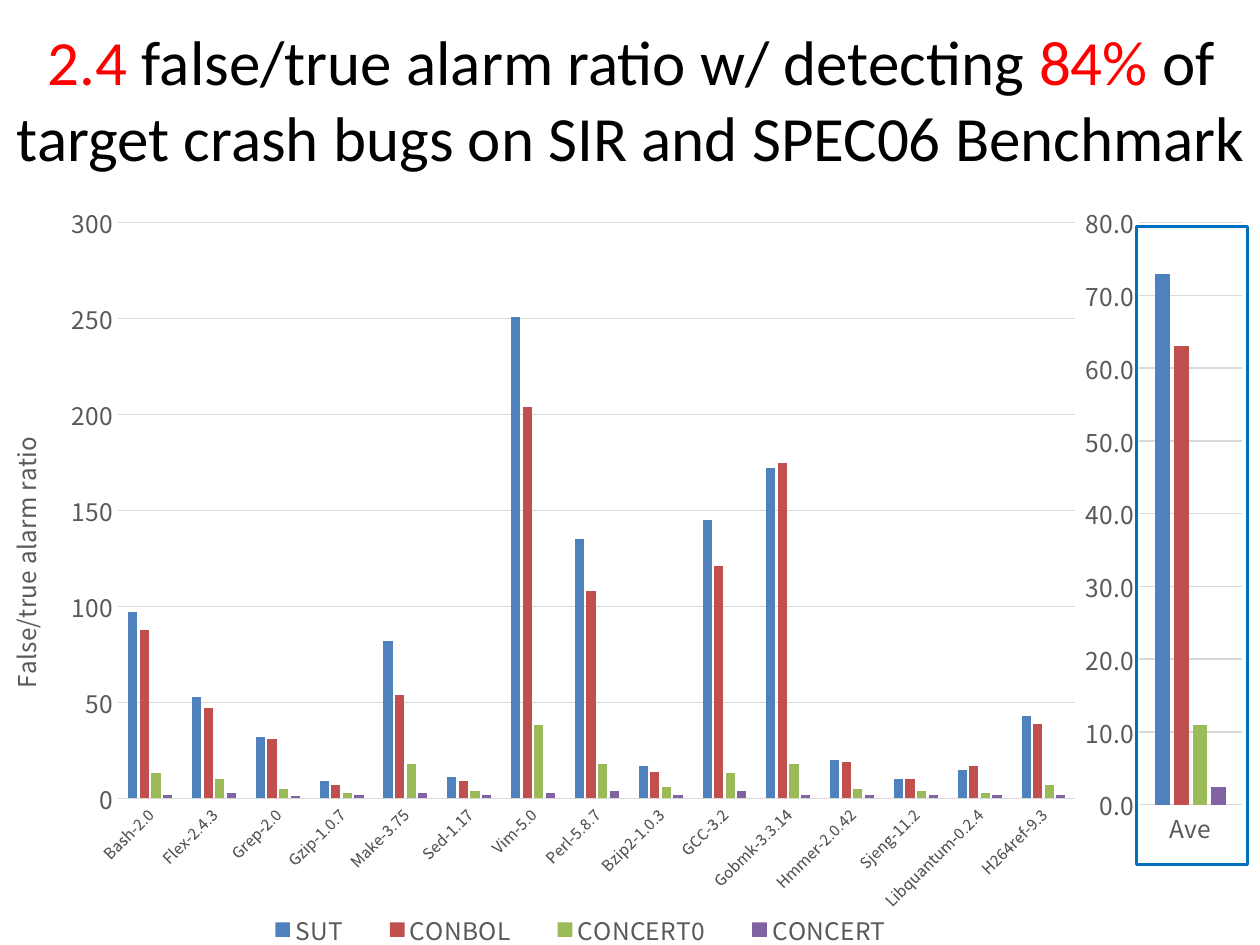
from lxml import etree
from pptx import Presentation
from pptx.chart.data import CategoryChartData as ChartData
from pptx.dml.color import RGBColor
from pptx.enum.chart import XL_CHART_TYPE as Kind, XL_LEGEND_POSITION as Spot
from pptx.enum.chart import XL_TICK_MARK as Tick
from pptx.enum.shapes import MSO_SHAPE as Shape
from pptx.enum.text import MSO_ANCHOR as Anchor, MSO_AUTO_SIZE as Fit, PP_ALIGN as Align
from pptx.oxml.ns import qn
from pptx.util import Inches, Pt

FACE = "Noto Sans CJK KR"
GREY, PALE = "595959", "D9D9D9"
HUES = ["4F81BD", "C0504D", "9BBB59", "8064A2"]
NAMES = ["SUT", "CONBOL", "CONCERT0", "CONCERT"]
RATIOS = {
    "Bash-2.0": (97, 88, 13, 2),
    "Flex-2.4.3": (53, 47, 10, 3),
    "Grep-2.0": (32, 31, 5, 1),
    "Gzip-1.0.7": (9, 7, 3, 2),
    "Make-3.75": (82, 54, 18, 3),
    "Sed-1.17": (11, 9, 4, 2),
    "Vim-5.0": (251, 204, 38, 3),
    "Perl-5.8.7": (135, 108, 18, 4),
    "Bzip2-1.0.3": (17, 14, 6, 2),
    "GCC-3.2": (145, 121, 13, 4),
    "Gobmk-3.3.14": (172, 175, 18, 2),
    "Hmmer-2.0.42": (20, 19, 5, 2),
    "Sjeng-11.2": (10, 10, 4, 2),
    "Libquantum-0.2.4": (15, 17, 3, 2),
    "H264ref-9.3": (43, 39, 7, 2),
}
MEAN = {"Ave": (73, 63, 11, 2.4)}


def color(code):
    return RGBColor.from_string(code)


def style(font, size, code, face=FACE):
    font.size, font.name, font.bold = Pt(size), face, False
    font.color.rgb = color(code)


def place(node, index, spots, inner=False):
    for old in node.findall(qn("c:layout")):
        node.remove(old)
    layout = etree.Element(qn("c:layout"))
    node.insert(index, layout)
    manual = etree.SubElement(layout, qn("c:manualLayout"))
    if inner:
        etree.SubElement(manual, qn("c:layoutTarget")).set("val", "inner")
    for key in "xy":
        etree.SubElement(manual, qn(f"c:{key}Mode")).set("val", "edge")
    for key, value in zip("xywh", spots):
        etree.SubElement(manual, qn(f"c:{key}")).set("val", str(value))


def add_bars(slide, box, table, names, top, step, size, form, area):
    data = ChartData()
    data.categories = list(table)
    for name, values in zip(names, zip(*table.values())):
        data.add_series(name, values)
    chart = slide.shapes.add_chart(Kind.COLUMN_CLUSTERED, *map(Inches, box), data).chart
    chart.has_title = chart.has_legend = False
    style(chart.font, 10, "000000")
    plot = chart.plots[0]
    plot.gap_width, plot.overlap, plot.vary_by_categories = 219, -27, False
    for series, hue in zip(plot.series, HUES):
        series.format.fill.solid()
        series.format.fill.fore_color.rgb = color(hue)
    base, scale = chart.category_axis, chart.value_axis
    for axis, points in ((base, size), (scale, 14)):
        axis.major_tick_mark = axis.minor_tick_mark = Tick.NONE
        style(axis.tick_labels.font, points, GREY)
    scale.minimum_scale, scale.maximum_scale, scale.major_unit = 0, top, step
    scale.tick_labels.number_format = form
    scale.tick_labels.number_format_is_linked = False
    scale.has_major_gridlines = True
    scale.format.line.fill.background()
    for line in (base.format.line, scale.major_gridlines.format.line):
        line.color.rgb, line.width = color(PALE), Pt(0.75)
    place(chart._chartSpace.chart.plotArea, 0, area, True)
    return chart


def add_ratios(slide, box):
    area = (0.11, 0.01, 0.89, 0.76)
    chart = add_bars(slide, box, RATIOS, NAMES, 300, 50, 9, "0", area)
    chart.category_axis._element.txPr.bodyPr.set("rot", "-2700000")
    title = chart.value_axis.axis_title
    frame = title.text_frame
    frame.text = "False/true alarm ratio"
    frame._txBody.bodyPr.set("rot", "-5400000")
    style(frame.paragraphs[0].runs[0].font, 14, GREY)
    place(title._element, 1, (0, 0.29))
    chart.has_legend = True
    legend = chart.legend
    legend.position, legend.include_in_layout = Spot.BOTTOM, False
    style(legend.font, 14, GREY)
    place(legend._element, 1, (0.22, 0.92, 0.64, 0.04))


def add_mean(slide, box):
    names = [f"Series {n}" for n in range(1, 5)]
    add_bars(slide, box, MEAN, names, 80, 10, 14, "0.0", (0.4, 0.03, 0.5, 0.88))


def add_frame(slide, box):
    frame = slide.shapes.add_shape(Shape.RECTANGLE, *map(Inches, box))
    frame.shadow.inherit = False
    frame.fill.background()
    frame.line.color.rgb, frame.line.width = color("0070C0"), Pt(1.5)


def set_title(slide, box):
    title = slide.shapes.title
    title.left, title.top, title.width, title.height = map(Inches, box)
    frame = title.text_frame
    frame.word_wrap, frame.auto_size = True, Fit.NONE
    frame.vertical_anchor = Anchor.MIDDLE
    line = frame.paragraphs[0]
    line.alignment = Align.CENTER
    for text, code in (
        ("2.4 ", "FF0000"),
        ("false/true alarm ratio w/ detecting ", "000000"),
        ("84% ", "FF0000"),
        ("of target crash bugs on SIR and SPEC06 Benchmark", "000000"),
    ):
        run = line.add_run()
        run.text = text
        style(run.font, 36, code, "Calibri")


def main():
    deck = Presentation()
    deck.slide_width, deck.slide_height = Inches(10), Inches(7.5)
    slide = deck.slides.add_slide(deck.slide_layouts[5])
    add_mean(slide, (8.39, 1.61, 1.63, 5.25))
    set_title(slide, (0, 0.23, 10.02, 1.1))
    add_frame(slide, (9.02, 1.8, 0.88, 5.06))
    add_ratios(slide, (0, 1.63, 8.54, 6.09))
    deck.save("out.pptx")


if __name__ == "__main__":
    main()
